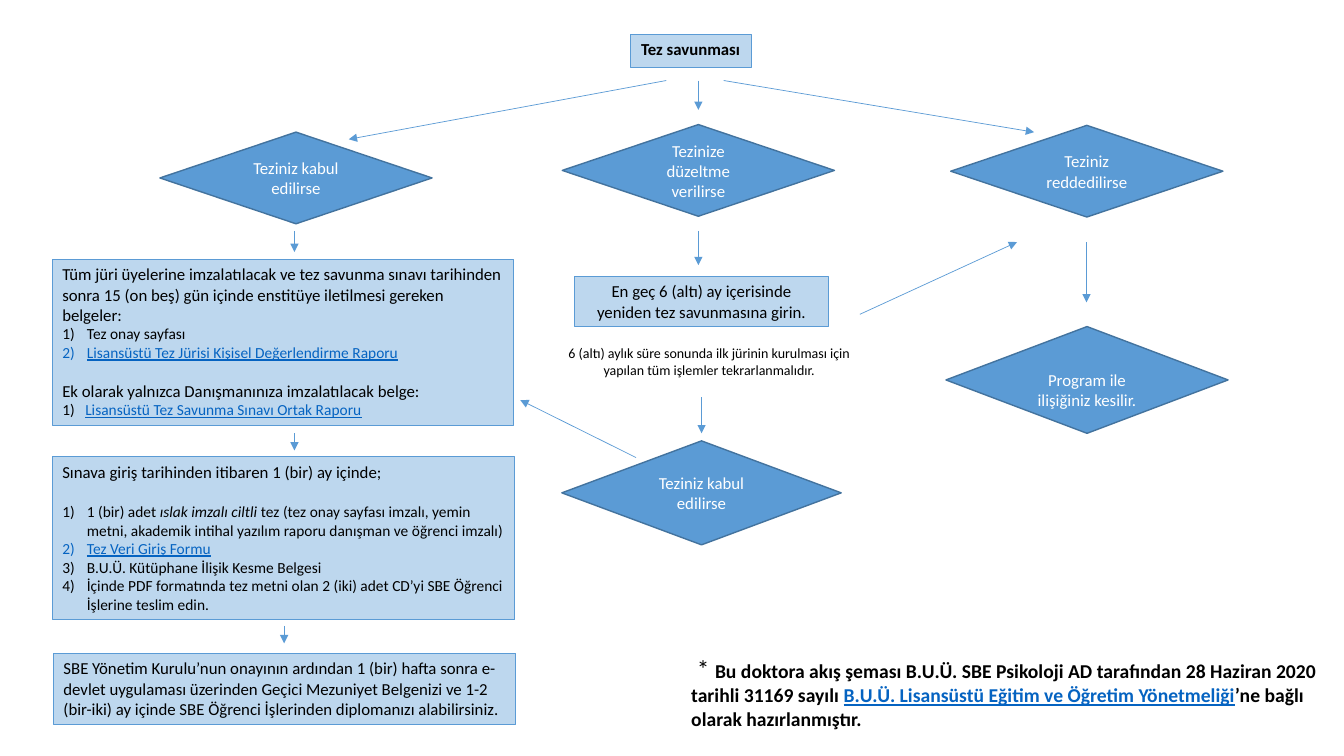
from lxml import etree
from pptx import Presentation
from pptx.dml.color import RGBColor
from pptx.enum.shapes import MSO_CONNECTOR, MSO_SHAPE
from pptx.enum.text import MSO_ANCHOR, MSO_AUTO_SIZE, PP_ALIGN
from pptx.oxml.ns import qn
from pptx.util import Cm, Pt

RECTANGLE, DECISION = MSO_SHAPE.RECTANGLE, MSO_SHAPE.FLOWCHART_DECISION
STRAIGHT = MSO_CONNECTOR.STRAIGHT
LEFT, CENTER = PP_ALIGN.LEFT, PP_ALIGN.CENTER
TOP, MIDDLE = MSO_ANCHOR.TOP, MSO_ANCHOR.MIDDLE
FIT_SHAPE = MSO_AUTO_SIZE.SHAPE_TO_FIT_TEXT

BLACK = RGBColor(0x00, 0x00, 0x00)
WHITE = RGBColor(0xFF, 0xFF, 0xFF)
BLUE = RGBColor(0x5B, 0x9B, 0xD5)
DARK_BLUE = RGBColor(0x43, 0x73, 0x9E)
PALE_BLUE = RGBColor(0xBD, 0xD7, 0xEE)
LINK_BLUE = RGBColor(0x05, 0x63, 0xC1)
FONT = "Calibri"


def run(text, size=12, **style):
    return {"text": text, "size": size, **style}


def line(*runs, **layout):
    return {"runs": runs, **layout}


def item(*runs):
    return line(*runs, numbered=True, hanging=0.62)


# (left, top, width, height) in cm, alignment, paragraphs
STEPS = [
    ((15.88, 0.86, 3.05, 0.84), CENTER, [line(run("Tez savunması", bold=True))]),
    ((1.32, 6.53, 11.63, 4.19), LEFT, [
        line(run("Tüm jüri üyelerine imzalatılacak ve tez savunma sınavı tarihinden "
                 "sonra 15 (on beş) gün içinde enstitüye iletilmesi gereken belgeler:")),
        item(run("Tez onay sayfası", 11)),
        item(run("Lisansüstü Tez Jürisi Kişisel Değerlendirme Raporu", 11, link=True)),
        line(run("Ek olarak yalnızca Danışmanınıza imzalatılacak belge:"), before=13.4),
        line(run("1)\t", 11),
             run("Lisansüstü Tez Savunma Sınavı Ortak Raporu", 11, link=True),
             hanging=0.58),
    ]),
    ((14.48, 6.96, 6.4, 1.28), CENTER, [
        line(run("En geç 6 (altı) ay içerisinde yeniden tez savunmasına girin.")),
    ]),
    ((1.32, 11.51, 11.66, 4.11), LEFT, [
        line(run("Sınava giriş tarihinden itibaren 1 (bir) ay içinde;"), after=14.6),
        item(run("1 (bir) adet ", 11), run("ıslak imzalı ciltli", 11, italic=True),
             run(" tez (tez onay sayfası imzalı, yemin metni, akademik intihal "
                 "yazılım raporu danışman ve öğrenci imzalı)", 11)),
        item(run("Tez Veri Giriş Formu", 11, link=True)),
        item(run("B.U.Ü. Kütüphane İlişik Kesme Belgesi", 11)),
        item(run("İçinde PDF formatında tez metni olan 2 (iki) adet CD’yi "
                 "SBE Öğrenci İşlerine teslim edin.", 11)),
    ]),
    ((1.35, 16.46, 11.65, 1.8), LEFT, [
        line(run("SBE Yönetim Kurulu’nun onayının ardından 1 (bir) hafta sonra e-devlet "
                 "uygulaması üzerinden Geçici Mezuniyet Belgenizi ve 1-2 (bir-iki) ay "
                 "içinde SBE Öğrenci İşlerinden diplomanızı alabilirsiniz.")),
    ]),
]

# (left, top, width, height) in cm, text, extra space above the text in cm
DECISIONS = [
    ((4.03, 3.33, 6.86, 2.31), "Teziniz kabul edilirse", 0),
    ((14.17, 3.14, 6.86, 2.31), "Tezinize düzeltme verilirse", 0),
    ((23.96, 3.16, 6.86, 2.31), "Teziniz reddedilirse", 0),
    ((14.16, 11.11, 7.04, 2.62), "Teziniz kabul edilirse", 0),
    ((23.84, 8.23, 7.11, 2.69), "Program ile ilişiğiniz kesilir.", 0.51),
]

NOTES = [
    ((13.92, 8.56, 7.9, 1.12), CENTER, [
        line(run("6 (altı) aylık süre sonunda ilk jürinin kurulması için yapılan "
                 "tüm işlemler tekrarlanmalıdır.", 10)),
    ]),
    ((17.17, 16.33, 16.33, 2.24), LEFT, [
        line(run("* ", 18),
             run("Bu doktora akış şeması B.U.Ü. SBE Psikoloji AD tarafından "
                 "28 Haziran 2020 tarihli 31169 sayılı ", 14, bold=True),
             run("B.U.Ü. Lisansüstü Eğitim ve Öğretim Yönetmeliği", 14, bold=True, link=True),
             run("’ne bağlı olarak hazırlanmıştır.", 14, bold=True), first_indent=0.14),
    ]),
]

# start x, start y, end x, end y in cm
ARROWS = [
    (16.79, 2.03, 8.79, 3.51),
    (17.6, 2.03, 17.6, 2.77),
    (18.24, 2.03, 26.06, 3.33),
    (7.42, 5.82, 7.42, 6.35),
    (17.6, 5.82, 17.6, 6.68),
    (27.38, 6.1, 27.38, 7.62),
    (21.67, 7.92, 25.63, 6.1),
    (17.68, 10.01, 17.68, 10.92),
    (16.03, 11.53, 13.11, 10.08),
    (7.42, 10.92, 7.42, 11.35),
    (7.16, 15.77, 7.16, 16.21),
]


def set_indents(paragraph, content):
    """Apply the hanging or first-line indent, in cm, and the numbering."""
    properties = paragraph._p.get_or_add_pPr()
    if "first_indent" in content:
        properties.set("indent", str(Cm(content["first_indent"])))
    if "hanging" in content:
        properties.set("marL", str(Cm(content["hanging"])))
        properties.set("indent", str(-Cm(content["hanging"])))
    if content.get("numbered"):
        etree.SubElement(properties, qn("a:buFont"), typeface="+mj-lt")
        etree.SubElement(properties, qn("a:buAutoNum"), type="arabicParenR")


def write(frame, lines, align, color=BLACK):
    for index, content in enumerate(lines):
        paragraph = frame.add_paragraph() if index else frame.paragraphs[0]
        paragraph.alignment = align
        paragraph.space_before = Pt(content.get("before", 0))
        paragraph.space_after = Pt(content.get("after", 0))
        set_indents(paragraph, content)
        for part in content["runs"]:
            piece = paragraph.add_run()
            piece.text = part["text"]
            font = piece.font
            font.name, font.size = FONT, Pt(part["size"])
            font.bold = part.get("bold", False)
            font.italic = part.get("italic", False)
            font.underline = part.get("link", False)
            font.color.rgb = LINK_BLUE if part.get("link") else color


def add_node(slide, kind, box, fill, outline, width):
    node = slide.shapes.add_shape(kind, *map(Cm, box))
    node.shadow.inherit = False
    node.fill.solid()
    node.fill.fore_color.rgb = fill
    node.line.color.rgb = outline
    node.line.width = Pt(width)
    node.text_frame.word_wrap = True
    return node


def add_arrow(slide, ends):
    arrow = slide.shapes.add_connector(STRAIGHT, *map(Cm, ends))
    arrow.line.color.rgb = BLUE
    arrow.line.width = Pt(0.5)
    etree.SubElement(arrow.line._get_or_add_ln(), qn("a:tailEnd"), type="triangle")
    etree.SubElement(arrow._element.spPr, qn("a:effectLst"))


def main():
    deck = Presentation()
    deck.slide_width, deck.slide_height = Cm(33.87), Cm(19.05)
    slide = deck.slides.add_slide(deck.slide_layouts[6])

    for ends in ARROWS:
        add_arrow(slide, ends)

    for box, align, lines in STEPS:
        frame = add_node(slide, RECTANGLE, box, PALE_BLUE, BLUE, 0.75).text_frame
        frame.vertical_anchor = TOP
        frame.auto_size = FIT_SHAPE
        write(frame, lines, align)
    slide.shapes[len(ARROWS)].text_frame.word_wrap = False

    for box, text, space_above in DECISIONS:
        frame = add_node(slide, DECISION, box, BLUE, DARK_BLUE, 1).text_frame
        frame.vertical_anchor = MIDDLE
        frame.margin_top = Cm(0.13 + space_above)
        write(frame, [line(run(text))], CENTER, WHITE)

    for box, align, lines in NOTES:
        frame = slide.shapes.add_textbox(*map(Cm, box)).text_frame
        frame.word_wrap = True
        frame.auto_size = FIT_SHAPE
        write(frame, lines, align)

    deck.save("out.pptx")


if __name__ == "__main__":
    main()
